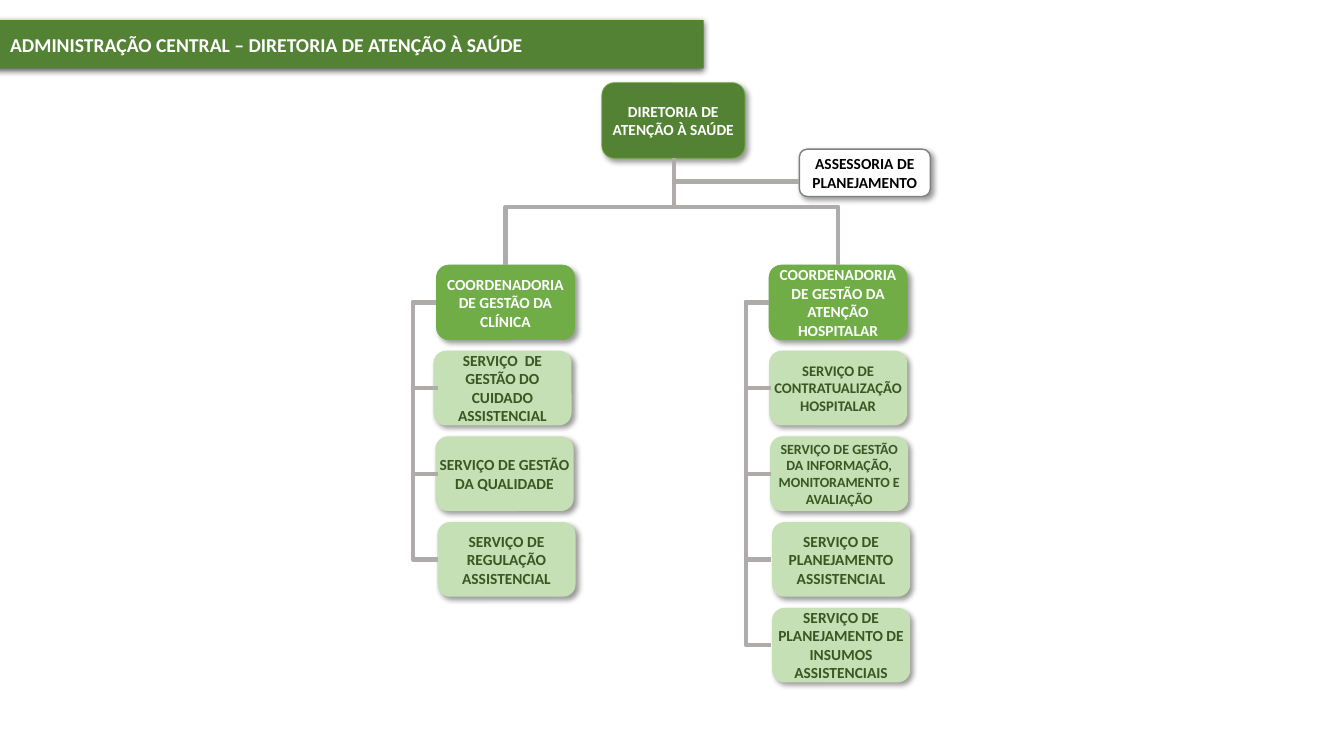
from lxml.etree import SubElement
from pptx import Presentation
from pptx.dml.color import RGBColor
from pptx.enum.shapes import MSO_CONNECTOR, MSO_SHAPE
from pptx.enum.text import MSO_ANCHOR, MSO_AUTO_SIZE, PP_ALIGN
from pptx.oxml import parse_xml
from pptx.oxml.ns import nsdecls, qn
from pptx.util import Inches, Pt

WHITE = RGBColor(0xFF, 0xFF, 0xFF)
BLACK = RGBColor(0x00, 0x00, 0x00)
GRAY = RGBColor(0x80, 0x80, 0x80)
LINK = RGBColor(0xAF, 0xAB, 0xAB)
DARK = RGBColor(0x54, 0x82, 0x35)
GREEN = RGBColor(0x70, 0xAD, 0x47)
PALE = RGBColor(0xC5, 0xE0, 0xB4)
FOREST = RGBColor(0x38, 0x57, 0x23)

CELL = Inches(0.1)
COLS, ROWS = 133.33, 75
BOX_W, BOX_H = 13.7, 7.4
TOP_ROW, PITCH = 26.3, 8.5
BRACKET, STEP = 2.3, 0.2
AXIS, FORK = 66.9, 20.5

BRANCHES = [
    (43.3, "COORDENADORIA DE GESTÃO DA CLÍNICA", [
        ("SERVIÇO  DE GESTÃO DO CUIDADO ASSISTENCIAL", 11, -0.3),
        ("SERVIÇO DE GESTÃO DA QUALIDADE", 11, -0.1),
        ("SERVIÇO DE REGULAÇÃO ASSISTENCIAL", 11, 0.1),
    ]),
    (76.3, "COORDENADORIA DE GESTÃO DA ATENÇÃO HOSPITALAR", [
        ("SERVIÇO DE CONTRATUALIZAÇÃO HOSPITALAR", 10.5, 0),
        ("SERVIÇO DE GESTÃO DA INFORMAÇÃO, MONITORAMENTO E AVALIAÇÃO", 10, 0.1),
        ("SERVIÇO DE PLANEJAMENTO ASSISTENCIAL", 11, 0.3),
        ("SERVIÇO DE PLANEJAMENTO DE INSUMOS ASSISTENCIAIS", 11, 0.3),
    ]),
]


def grid(*cells):
    return [int(c * CELL) for c in cells]


def add_shadow(s, alpha, blur, dist, angle):
    s.shadow.inherit = False
    effects = s._element.spPr.find(qn("a:effectLst"))
    shadow = SubElement(effects, qn("a:outerShdw"), blurRad=str(Pt(blur)),
                        dist=str(Pt(dist)), dir=str(angle * 60000),
                        algn="tl", rotWithShape="0")
    color = SubElement(shadow, qn("a:srgbClr"), val=str(BLACK))
    SubElement(color, qn("a:alpha"), val=str(alpha * 1000))


def paint(s, fill, line=None, width=0.5):
    s.fill.solid()
    s.fill.fore_color.rgb = fill
    if line is None:
        s.line.fill.background()
    else:
        s.line.color.rgb = line
        s.line.width = Pt(width)


def write(s, text, size, color, align, inset=0):
    tf = s.text_frame
    tf.text = text
    tf.word_wrap = True
    tf.auto_size = MSO_AUTO_SIZE.NONE
    tf.vertical_anchor = MSO_ANCHOR.MIDDLE
    tf.margin_left, tf.margin_right, tf.margin_top, tf.margin_bottom = grid(inset, 0, 0, 0)
    p = tf.paragraphs[0]
    p.alignment = align
    font = p.runs[0].font
    font.name, font.size, font.bold = "Calibri", Pt(size), True
    font.color.rgb = color


def add_title(slide, text):
    s = slide.shapes.title
    s.left, s.top, s.width, s.height = grid(-2.4, 2, 72.2, 4.8)
    s._element.spPr.insert(1, parse_xml(
        f'<a:prstGeom {nsdecls("a")} prst="roundRect"><a:avLst/></a:prstGeom>'))
    paint(s, DARK)
    add_shadow(s, 63, 4.5, 1.5, 90)
    write(s, text, 14, WHITE, PP_ALIGN.LEFT, inset=3.4)


def add_box(slide, text, place, fill, color, line=None, width=0.5, size=11):
    s = slide.shapes.add_shape(MSO_SHAPE.ROUNDED_RECTANGLE, *grid(*place))
    paint(s, fill, line, width)
    add_shadow(s, 40, 4, 3, 45)
    write(s, text, size, color, PP_ALIGN.CENTER)


def add_link(slide, x1, y1, x2, y2, bend=None):
    kind = MSO_CONNECTOR.STRAIGHT if bend is None else MSO_CONNECTOR.ELBOW
    c = slide.shapes.add_connector(kind, *grid(x1, y1, x2, y2))
    c.line.color.rgb = LINK
    c.line.width = Pt(3)
    spPr = c._element.spPr
    SubElement(spPr, qn("a:effectLst"))
    if bend is not None:
        share = round((bend - x1) / (x2 - x1) * 100000)
        guides = spPr.find(qn("a:prstGeom")).get_or_add_avLst()
        SubElement(guides, qn("a:gd"), name="adj1", fmla=f"val {share}")


def add_branch(slide, left, head, services):
    add_box(slide, head, (left, TOP_ROW, BOX_W, BOX_H), GREEN, WHITE, GREEN)
    middle = TOP_ROW + BOX_H / 2
    for i, (text, size, shift) in enumerate(services, 1):
        drop = i * PITCH
        add_box(slide, text, (left + shift, TOP_ROW + drop, BOX_W, BOX_H),
                PALE, FOREST, size=size)
        add_link(slide, left, middle, left + STEP, middle + drop, left - BRACKET)
    center = left + BOX_W / 2
    add_link(slide, AXIS, FORK, center, TOP_ROW, center)


def main():
    prs = Presentation()
    prs.slide_width, prs.slide_height = grid(COLS, ROWS)
    slide = prs.slides.add_slide(prs.slide_layouts[5])
    add_title(slide, "ADMINISTRAÇÃO CENTRAL – DIRETORIA DE ATENÇÃO À SAÚDE")
    add_box(slide, "DIRETORIA DE ATENÇÃO À SAÚDE", (59.7, 8.2, 14.2, 7.5),
            DARK, WHITE, GREEN)
    add_box(slide, "ASSESSORIA DE PLANEJAMENTO", (79.3, 14.8, 13, 4.7),
            WHITE, BLACK, GRAY, 1)
    add_link(slide, AXIS, 15.7, AXIS, FORK)
    add_link(slide, AXIS, 18, 79.3, 18)
    for branch in BRANCHES:
        add_branch(slide, *branch)
    prs.save("out.pptx")


if __name__ == "__main__":
    main()
